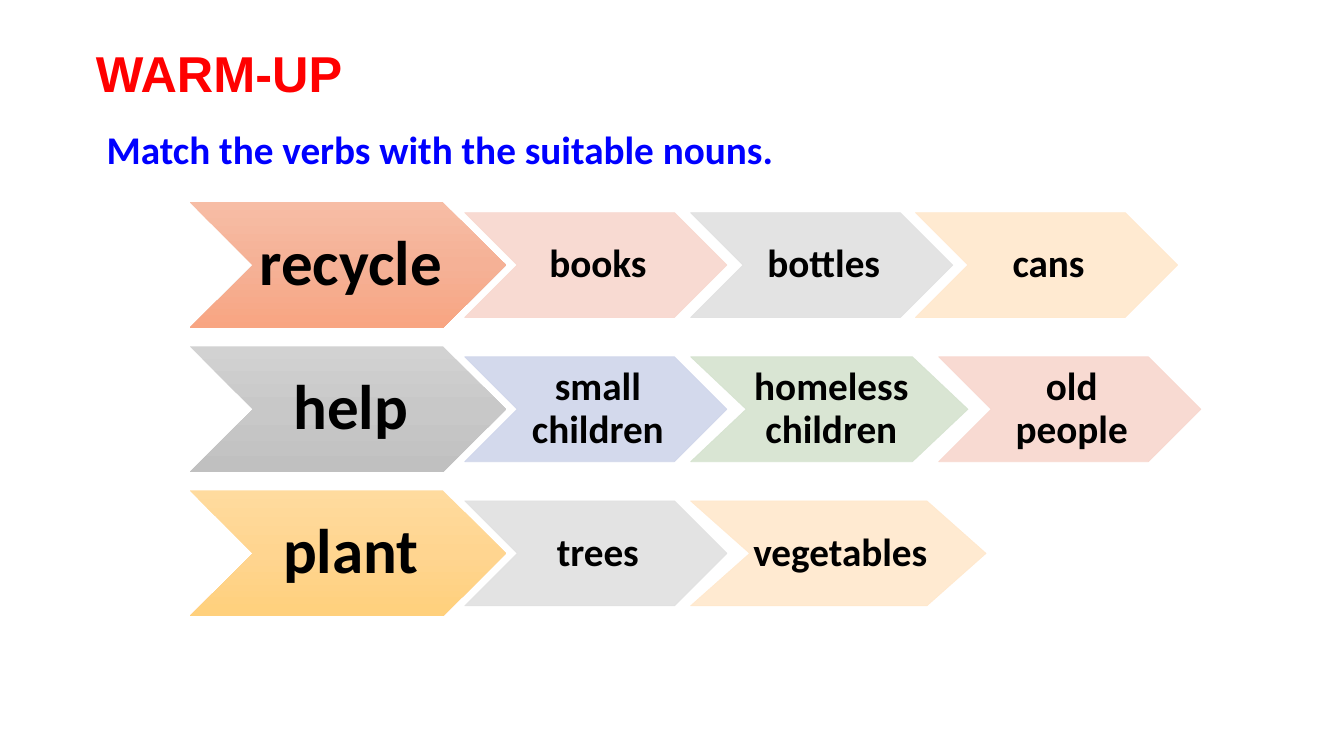
from copy import deepcopy
from dataclasses import dataclass

from lxml.etree import SubElement
from pptx import Presentation
from pptx.dml.color import RGBColor
from pptx.enum.shapes import MSO_SHAPE
from pptx.enum.text import MSO_ANCHOR, MSO_AUTO_SIZE, PP_ALIGN
from pptx.oxml.ns import qn
from pptx.util import Inches, Pt


@dataclass(frozen=True)
class Theme:
    red: str = "FF0000"
    blue: str = "0000FF"
    black: str = "000000"
    rose: str = "F8D7CE"
    gray: str = "E1E1E1"
    cream: str = "FFE8CC"
    lavender: str = "CFD5EA"
    sage: str = "D5E3CF"
    orange_blend: tuple = ("F7BDA5", "F5B196", "F8A582")
    gray_blend: tuple = ("D2D2D2", "C8C8C8", "C0C0C0")
    gold_blend: tuple = ("FFDB9E", "FFD590", "FFD07C")
    heading: str = "Arial"
    body: str = "Calibri"
    title_size: int = 36
    verb_size: int = 45
    text_size: int = 28


theme = Theme()


def write(tf, text, font, size, color, align=PP_ALIGN.LEFT):
    p = tf.paragraphs[0]
    p.alignment = align
    r = p.add_run()
    r.text = text
    for name, value in {"name": font, "size": Pt(size), "bold": True}.items():
        setattr(r.font, name, value)
    r.font.color.rgb = RGBColor.from_string(color)


def add_chevron(slide, text, left, middle, width, height, size, inset):
    """Add a borderless chevron whose point is a fifth of its width."""
    sp = slide.shapes.add_shape(
        MSO_SHAPE.CHEVRON, Inches(left), Inches(middle - height / 2),
        Inches(width), Inches(height))
    sp.adjustments[0] = width / 5 / height
    sp.shadow.inherit = False
    sp.line.fill.background()
    tf = sp.text_frame
    layout = {"margin_left": Inches(inset), "margin_right": 0,
              "margin_top": Inches(0.02), "margin_bottom": Inches(0.02),
              "vertical_anchor": MSO_ANCHOR.MIDDLE, "word_wrap": " " in text}
    for name, value in layout.items():
        setattr(tf, name, value)
    write(tf, text, theme.body, size, theme.black, PP_ALIGN.CENTER)
    tf.paragraphs[0].line_spacing = 0.9
    return sp


prs = Presentation()
prs.slide_width, prs.slide_height = Inches(13.33), Inches(7.5)
s = prs.slides.add_slide(prs.slide_layouts[5])

title = s.shapes.title
title.left, title.top = Inches(0.85), Inches(0.37)
title.width, title.height = Inches(3.35), Inches(0.71)
write(title.text_frame, "WARM-UP", theme.heading, theme.title_size, theme.red)

task = s.shapes.add_textbox(Inches(0.96), Inches(1.19), Inches(10.31), Inches(0.57))
write(task.text_frame, "Match the verbs with the suitable nouns.",
      theme.body, theme.text_size, theme.blue)

for sp in (title, task):
    tf = sp.text_frame
    tf.word_wrap = True
    tf.auto_size = MSO_AUTO_SIZE.SHAPE_TO_FIT_TEXT
    tf.vertical_anchor = MSO_ANCHOR.TOP

# Each noun: text, colour, left, width
rows = [
    ("recycle", theme.orange_blend, [
        ("books", theme.rose, 4.61, 2.6),
        ("bottles", theme.gray, 6.85, 2.6),
        ("cans", theme.cream, 9.08, 2.6)]),
    ("help", theme.gray_blend, [
        ("small children", theme.lavender, 4.61, 2.6),
        ("homeless children", theme.sage, 6.85, 2.75),
        ("old people", theme.rose, 9.31, 2.6)]),
    ("plant", theme.gold_blend, [
        ("trees", theme.gray, 4.61, 2.6),
        ("vegetables", theme.cream, 6.85, 2.93)]),
]

for i, (verb, blend, nouns) in enumerate(rows):
    middle = 2.63 + 1.43 * i
    sp = add_chevron(s, verb, 1.88, middle, 3.14, 1.25, theme.verb_size, 0.06)
    sp.fill.gradient()
    sp.fill.gradient_angle = 270
    last_stop = sp._element.spPr.find(".//" + qn("a:gs") + "[last()]")
    last_stop.addprevious(deepcopy(last_stop))
    for stop, color, position in zip(sp.fill.gradient_stops, blend, (0, 0.5, 1)):
        stop.color.rgb = RGBColor.from_string(color)
        stop.position = position

    for noun, color, left, width in nouns:
        sp = add_chevron(s, noun, left, middle, width, 1.04, theme.text_size, 0.04)
        sp.line.width = Pt(0.5)
        for fill in (sp.fill, sp.line.fill):
            fill.solid()
            fill.fore_color.rgb = RGBColor.from_string(color)
        for clr in sp._element.spPr.iter(qn("a:srgbClr")):
            SubElement(clr, qn("a:alpha"), val="90000")

prs.save("out.pptx")
